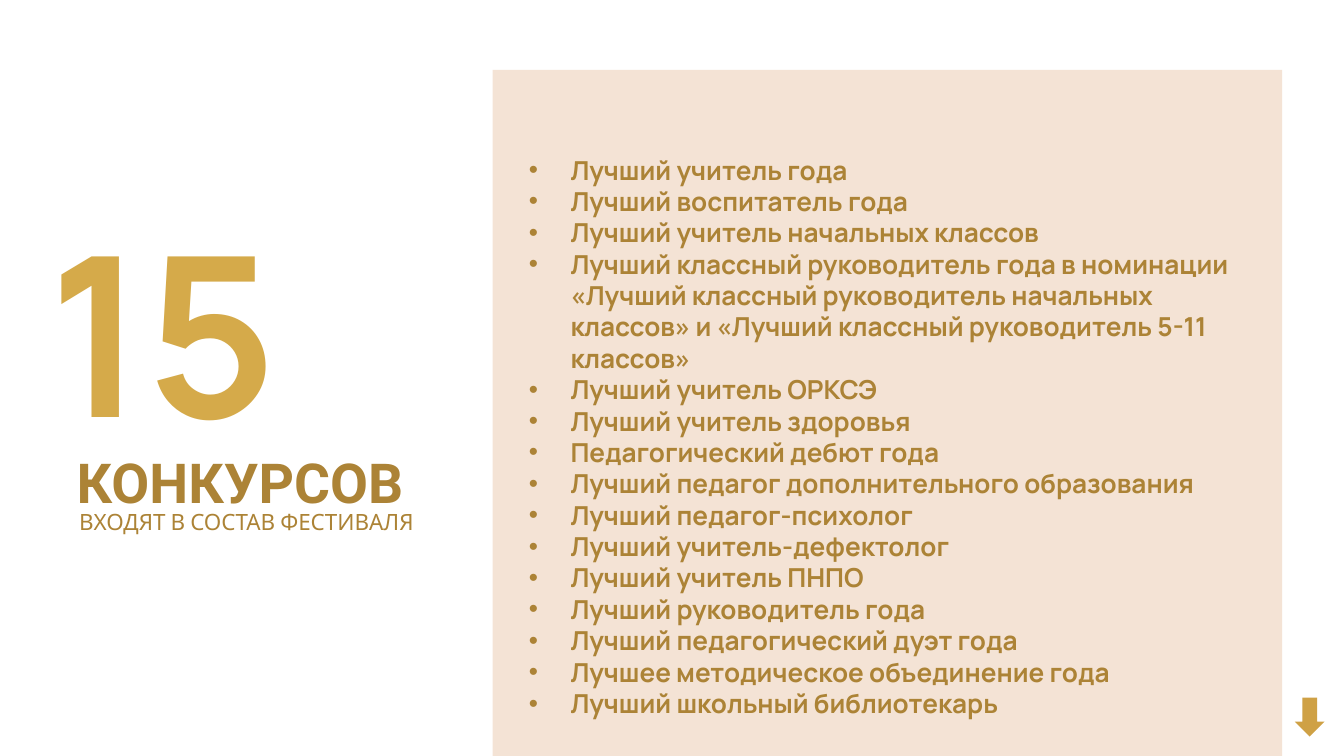
from lxml import etree
from pptx import Presentation, util as u
from pptx.dml.color import RGBColor
from pptx.enum import shapes, text
from pptx.oxml import ns

WIDTH, HEIGHT = 20, 11.25
GOLD = RGBColor(0xD5, 0xAA, 0x4A)
BRONZE = RGBColor(0xAC, 0x83, 0x36)
ARROW_GOLD = RGBColor(0xCF, 0xA1, 0x45)
PEACH = RGBColor(0xF4, 0xE3, 0xD5)

CONTESTS = [
    "Лучший учитель года",
    "Лучший воспитатель года",
    "Лучший учитель начальных классов",
    "Лучший классный руководитель года в номинации «Лучший классный "
    "руководитель начальных классов» и «Лучший классный руководитель "
    "5-11 классов»",
    "Лучший учитель ОРКСЭ",
    "Лучший учитель здоровья",
    "Педагогический дебют года",
    "Лучший педагог дополнительного образования",
    "Лучший педагог-психолог",
    "Лучший учитель-дефектолог",
    "Лучший учитель ПНПО",
    "Лучший руководитель года",
    "Лучший педагогический дуэт года",
    "Лучшее методическое объединение года",
    "Лучший школьный библиотекарь",
]


def add_bullet(para, indent):
    """Give the paragraph a round bullet with a hanging indent in inches."""
    props = para._p.get_or_add_pPr()
    props.set("marL", str(u.Inches(indent)))
    props.set("indent", str(-u.Inches(indent)))
    etree.SubElement(props, ns.qn("a:buFont")).set("typeface", "Arial")
    etree.SubElement(props, ns.qn("a:buChar")).set("char", "•")


def add_text(page, area, lines, *, size, font, color, bold=False,
             align=text.PP_ALIGN.LEFT, leading=None, inset=(0, 0), indent=None):
    """Add a text box with one paragraph per line; area and inset in inches."""
    box = page.shapes.add_textbox(*map(u.Inches, area))
    frame = box.text_frame
    frame.word_wrap = True
    frame.margin_left = frame.margin_right = u.Inches(inset[0])
    frame.margin_top = frame.margin_bottom = u.Inches(inset[1])
    for number, line in enumerate(lines):
        para = frame.add_paragraph() if number else frame.paragraphs[0]
        para.alignment = align
        if leading:
            para.line_spacing = u.Pt(leading)
        if indent:
            add_bullet(para, indent)
        span = para.add_run()
        span.text = line
        span.font.size = u.Pt(size)
        span.font.name = font
        span.font.bold = bold
        span.font.color.rgb = color


def add_filled(page, kind, area, color):
    shape = page.shapes.add_shape(kind, *map(u.Inches, area))
    shape.shadow.inherit = False
    shape.fill.solid()
    shape.fill.fore_color.rgb = color
    shape.line.fill.background()


def main():
    deck = Presentation()
    deck.slide_width, deck.slide_height = u.Inches(WIDTH), u.Inches(HEIGHT)
    page = deck.slides.add_slide(deck.slide_layouts[6])
    centre = text.PP_ALIGN.CENTER
    panel_top = 1.04

    add_text(page, (0, 5.96, 4.85, 0.93), ["15"], size=239, font="Manrope",
             color=GOLD, bold=True, align=centre, leading=66.3)
    add_text(page, (0, 6.67, 7.15, 1), ["КОНКУРСОВ"], size=59, font="Roboto",
             color=BRONZE, bold=True, align=centre, leading=70.8)
    add_filled(page, shapes.MSO_SHAPE.RECTANGLE,
               (7.33, panel_top, 11.75, HEIGHT - panel_top), PEACH)
    add_text(page, (1.08, 7.51, 8.74, 0.5), ["ВХОДЯТ В СОСТАВ ФЕСТИВАЛЯ"],
             size=24, font="Cabin", color=BRONZE,
             align=text.PP_ALIGN.JUSTIFY, inset=(0.1, 0.05))
    add_text(page, (7.87, 2.29, 11.1, 8.7), CONTESTS, size=28, font="Manrope",
             color=BRONZE, bold=True, indent=0.62)
    add_filled(page, shapes.MSO_SHAPE.DOWN_ARROW,
               (19.27, 10.38, 0.44, 0.58), ARROW_GOLD)
    deck.save("out.pptx")


if __name__ == "__main__":
    main()
